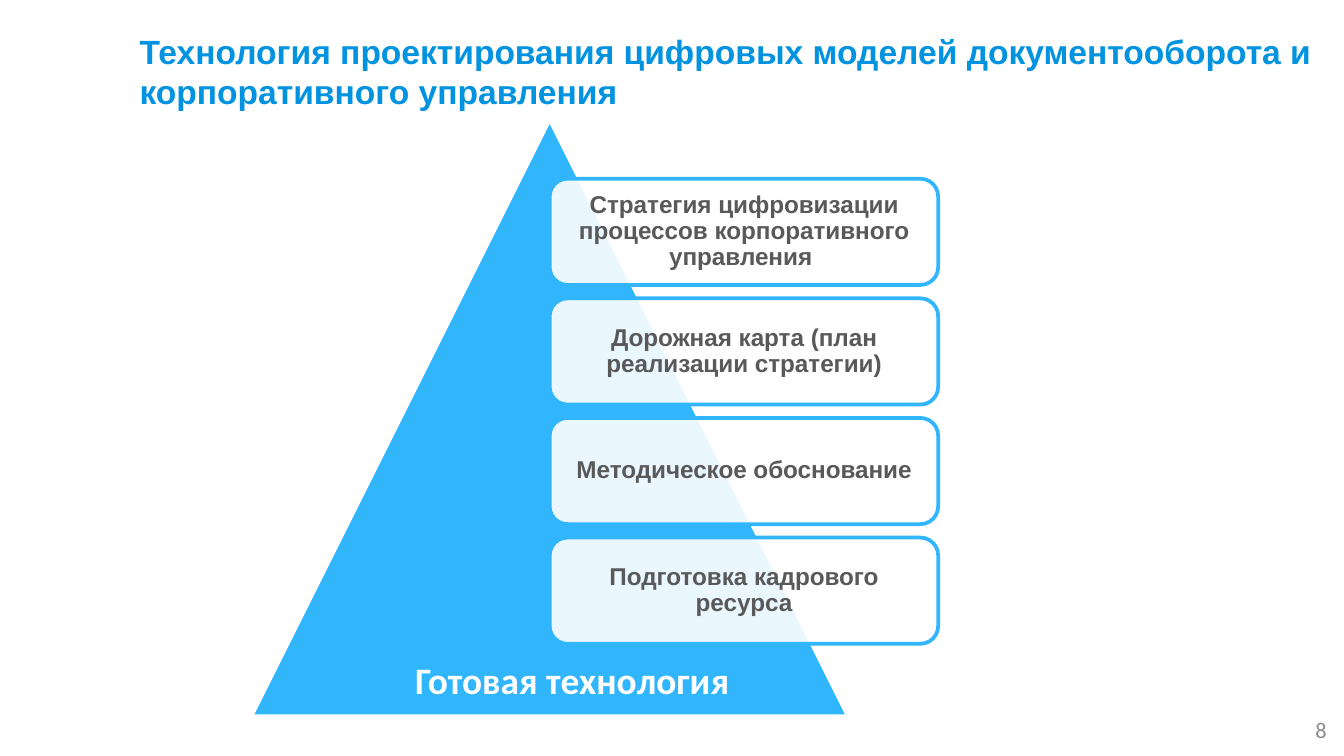
from lxml import etree
from pptx import Presentation
from pptx.dml.color import RGBColor
from pptx.enum.shapes import MSO_SHAPE
from pptx.enum.text import MSO_ANCHOR, PP_ALIGN
from pptx.oxml.ns import qn
from pptx.util import Inches, Pt

TRIANGLE, ROUNDED = MSO_SHAPE.ISOSCELES_TRIANGLE, MSO_SHAPE.ROUNDED_RECTANGLE
TOP, MIDDLE = MSO_ANCHOR.TOP, MSO_ANCHOR.MIDDLE
LEFT, CENTER, RIGHT = PP_ALIGN.LEFT, PP_ALIGN.CENTER, PP_ALIGN.RIGHT

WHITE = RGBColor(0xFF, 0xFF, 0xFF)
SKY = RGBColor(0x31, 0xB6, 0xFD)
TITLE_BLUE = RGBColor(0x02, 0x93, 0xE0)
DARK_GRAY = RGBColor(0x59, 0x59, 0x59)
LIGHT_GRAY = RGBColor(0x8C, 0x8C, 0x8C)

TITLE_FONT = {"name": "Arial", "size": Pt(18), "bold": True}
STAGE_FONT = {"name": "Arial", "size": Pt(13), "bold": True}
RESULT_FONT = {"name": "Calibri", "size": Pt(20), "bold": True}
NUMBER_FONT = {"name": "Calibri", "size": Pt(12), "bold": False}

STAGES = [
    "Стратегия цифровизации процессов корпоративного управления ",
    "Дорожная карта (план реализации стратегии)",
    "Методическое обоснование",
    "Подготовка кадрового ресурса",
]
STAGE_TOP, STAGE_STEP = 1.33, 0.89


def write(shape, text, font, color, align=LEFT, anchor=TOP):
    frame = shape.text_frame
    frame.word_wrap = True
    frame.vertical_anchor = anchor
    paragraph = frame.paragraphs[0]
    paragraph.text = text
    paragraph.alignment = align
    for attribute, value in font.items():
        setattr(paragraph.font, attribute, value)
    paragraph.font.color.rgb = color


def add_label(slide, box, text, font, color, align=LEFT, anchor=TOP):
    label = slide.shapes.add_textbox(*map(Inches, box))
    write(label, text, font, color, align, anchor)
    return label


def add_outlined(slide, preset, box, fill, line):
    shape = slide.shapes.add_shape(preset, *map(Inches, box))
    shape.shadow.inherit = False
    shape.fill.solid()
    shape.fill.fore_color.rgb = fill
    shape.line.color.rgb = line
    shape.line.width = Pt(2)
    return shape


def set_opacity(shape, percent):
    color = shape.fill._xPr.find(qn("a:solidFill"))[0]
    etree.SubElement(color, qn("a:alpha"), val=str(percent * 1000))


def add_stage(slide, top, text):
    stage = add_outlined(slide, ROUNDED, (4.09, top, 2.89, 0.79), WHITE, SKY)
    set_opacity(stage, 90)
    write(stage, text, STAGE_FONT, DARK_GRAY, CENTER, MIDDLE)
    frame = stage.text_frame
    for side in ("left", "top", "right", "bottom"):
        setattr(frame, f"margin_{side}", Inches(0.05))
    frame.paragraphs[0].line_spacing = 0.9


def main():
    presentation = Presentation()
    presentation.slide_width = Inches(10)
    presentation.slide_height = Inches(10 * 9 / 16)
    slide = presentation.slides.add_slide(presentation.slide_layouts[6])

    add_label(slide, (7.64, 5.28, 2.33, 0.3), "8",
              NUMBER_FONT, LIGHT_GRAY, RIGHT, MIDDLE)
    title = add_label(
        slide, (0.94, 0.18, 9.09, 0.71),
        "Технология проектирования цифровых моделей документооборота и "
        "корпоративного управления",
        TITLE_FONT, TITLE_BLUE)
    title.fill.solid()
    title.fill.fore_color.rgb = WHITE

    add_outlined(slide, TRIANGLE, (1.87, 0.89, 4.44, 4.44), SKY, WHITE)
    for index, text in enumerate(STAGES):
        add_stage(slide, STAGE_TOP + index * STAGE_STEP, text)
    add_label(slide, (2.99, 4.84, 3.27, 0.44), "Готовая технология",
              RESULT_FONT, WHITE)

    presentation.save("out.pptx")


if __name__ == "__main__":
    main()
